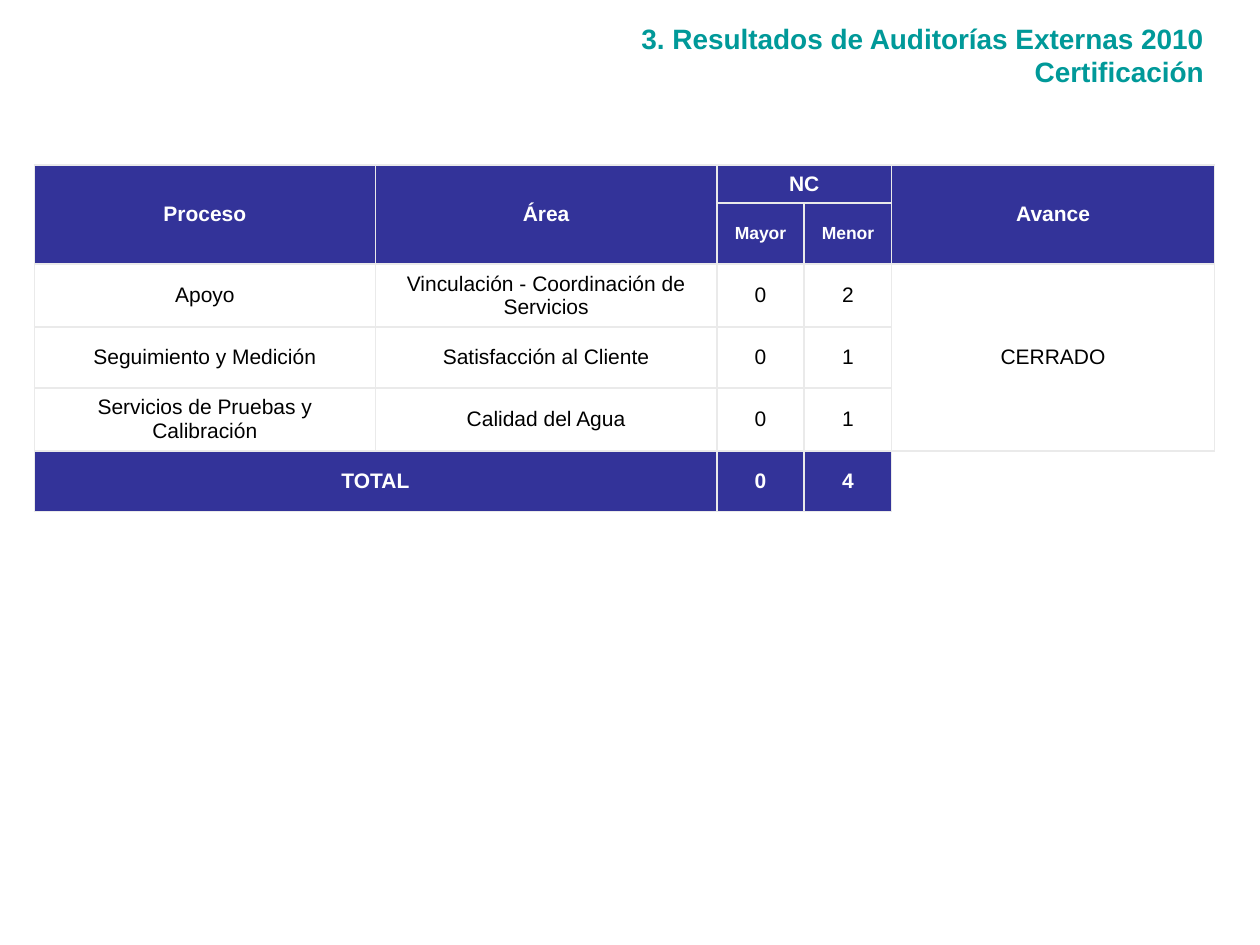
from pptx import Presentation
from pptx.dml.color import RGBColor
from pptx.enum.text import MSO_ANCHOR, PP_ALIGN
from pptx.oxml.ns import qn
from pptx.util import Pt
from lxml import etree

CENTER, RIGHT = PP_ALIGN.CENTER, PP_ALIGN.RIGHT
MIDDLE = MSO_ANCHOR.MIDDLE
FONT = "Arial"
NAVY, TEAL, GRAY, WHITE, BLACK = "333399", "009999", "EAEAEA", "FFFFFF", "000000"


def style_font(font, size, color, bold):
    font.name = FONT
    font.size = Pt(size)
    font.bold = bold
    font.color.rgb = RGBColor.from_string(color)


def set_borders(cell, visible_sides):
    properties = cell._tc.get_or_add_tcPr()
    for index, side in enumerate("LRTB"):
        line = etree.Element(qn(f"a:ln{side}"), w=str(Pt(1)))
        if side in visible_sides:
            fill = etree.SubElement(line, qn("a:solidFill"))
            etree.SubElement(fill, qn("a:srgbClr"), val=GRAY)
        else:
            etree.SubElement(line, qn("a:noFill"))
        properties.insert(index, line)


presentation = Presentation()
presentation.slide_width = Pt(720)
presentation.slide_height = Pt(540)
slide = presentation.slides.add_slide(presentation.slide_layouts[6])

# Title
title = slide.shapes.add_textbox(Pt(332), Pt(8.6), Pt(363), Pt(46))
title.text_frame.word_wrap = True
title.text_frame.text = "3. Resultados de Auditorías Externas 2010\nCertificación"
for paragraph in title.text_frame.paragraphs:
    paragraph.alignment = RIGHT
    for run in paragraph.runs:
        style_font(run.font, 16, TEAL, True)

# Audit results table
rows = [
    ["Proceso", "Área", "NC", "", "Avance"],
    ["", "", "Mayor", "Menor", ""],
    ["Apoyo", "Vinculación - Coordinación de Servicios", "0", "2", "CERRADO"],
    ["Seguimiento y Medición", "Satisfacción al Cliente", "0", "1", ""],
    ["Servicios de Pruebas y Calibración", "Calidad del Agua", "0", "1", ""],
    ["TOTAL", "", "0", "4", ""],
]
column_widths = [195, 195, 50, 50, 184.5]
row_heights = [21.6, 34.8, 35.6, 34.8, 36, 34.8]
table = slide.shapes.add_table(
    len(rows), len(column_widths), Pt(19.6), Pt(94.4),
    Pt(sum(column_widths)), Pt(sum(row_heights))).table
table.first_row = False
table.horz_banding = False
for column, width in zip(table.columns, column_widths):
    column.width = Pt(width)
for row, height in zip(table.rows, row_heights):
    row.height = Pt(height)

# Cell text, fills and borders
last_row, last_column = len(rows) - 1, len(column_widths) - 1
for row_index, values in enumerate(rows):
    for column_index, value in enumerate(values):
        cell = table.cell(row_index, column_index)
        empty_corner = (row_index, column_index) == (last_row, last_column)
        highlighted = row_index in (0, 1, last_row) and not empty_corner
        if highlighted:
            cell.fill.solid()
            cell.fill.fore_color.rgb = RGBColor.from_string(NAVY)
        else:
            cell.fill.background()
        set_borders(cell, "LT" if empty_corner else "LRTB")
        cell.vertical_anchor = MIDDLE
        cell.text_frame.text = value
        paragraph = cell.text_frame.paragraphs[0]
        paragraph.alignment = CENTER
        size = 10 if row_index == 1 else 12
        color = WHITE if highlighted else BLACK
        style_font(paragraph.font, size, color, highlighted)
        for run in paragraph.runs:
            style_font(run.font, size, color, highlighted)

# Merged cells: first and last corner
merged_ranges = [
    ((0, 0), (1, 0)),
    ((0, 1), (1, 1)),
    ((0, 2), (0, 3)),
    ((0, 4), (1, 4)),
    ((2, 4), (4, 4)),
    ((5, 0), (5, 1)),
]
for first, last in merged_ranges:
    table.cell(*first).merge(table.cell(*last))

presentation.save("out.pptx")
